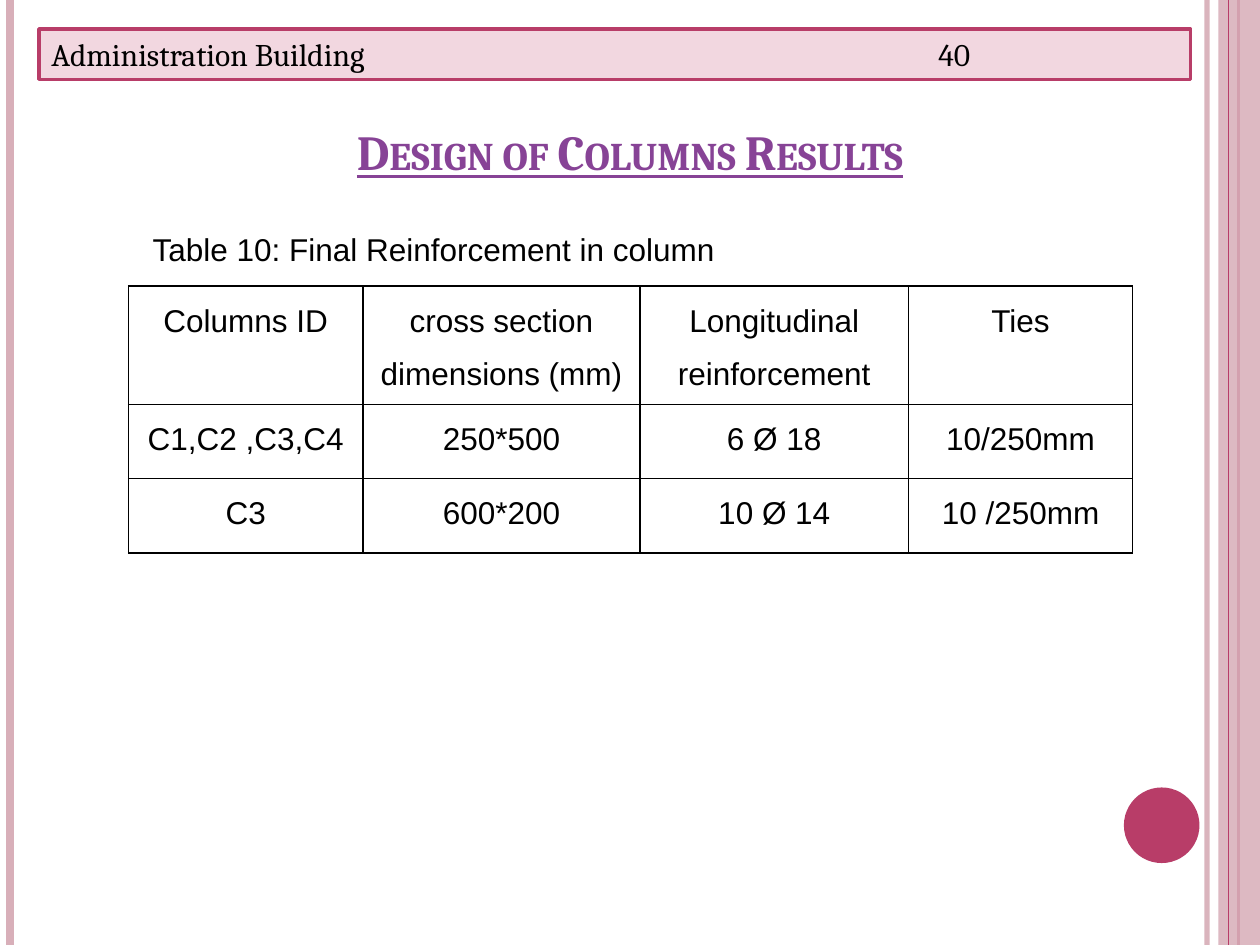
import pptx
import pptx.util
import pptx.dml.color
import pptx.enum.shapes
import pptx.enum.text
import pptx.oxml
import pptx.oxml.ns
from lxml import etree

RGBColor = pptx.dml.color.RGBColor
Inches = pptx.util.Inches
Pt = pptx.util.Pt
SHAPE = pptx.enum.shapes.MSO_SHAPE
ALIGN = pptx.enum.text.PP_ALIGN
ANCHOR = pptx.enum.text.MSO_ANCHOR
qn = pptx.oxml.ns.qn

ROSE = RGBColor(0xB8, 0x3D, 0x68)
DUSTY = RGBColor(0xD8, 0xAF, 0xB9)
BLUSH = RGBColor(0xF2, 0xD7, 0xE0)
PURPLE = RGBColor(0x87, 0x43, 0x96)
BLACK = RGBColor(0, 0, 0)

WIDTH, HEIGHT = 10, 7.5
COLUMN_WIDTHS = [1.86, 2.2, 2.13, 1.78]
ROW_HEIGHTS = [0.94, 0.59, 0.59]
RESULTS = [
    ["Columns ID", "cross section dimensions (mm)", "Longitudinal reinforcement", "Ties"],
    ["C1,C2 ,C3,C4", "250*500", "6 Ø 18", "10/250mm"],
    ["C3", "600*200", "10 Ø 14", "10 /250mm"],
]


def set_alpha(color_parent, percent):
    color = color_parent.find(".//" + qn("a:srgbClr"))
    etree.SubElement(color, qn("a:alpha"), val=str(percent * 1000))


def style_text(paragraph, text, face, size, color, align):
    paragraph.text = text
    paragraph.alignment = align
    font = paragraph.font
    font.name, font.size = face, Pt(size)
    font.color.rgb = color
    return font


def add_panel(slide, kind, box, fill):
    panel = slide.shapes.add_shape(kind, *map(Inches, box))
    panel.shadow.inherit = False
    panel.fill.solid()
    panel.fill.fore_color.rgb = fill
    panel.line.fill.background()
    return panel


def add_stripe(slide, x, box, color, weight, opacity=100):
    left, top, _, height = box
    x, top, bottom = Inches(left + x), Inches(top), Inches(top + height)
    stripe = slide.shapes.add_connector(
        pptx.enum.shapes.MSO_CONNECTOR.STRAIGHT, x, top, x, bottom)
    stripe.line.color.rgb = color
    stripe.line.width = Pt(weight)
    properties = stripe._element.spPr
    etree.SubElement(properties, qn("a:effectLst"))
    if opacity < 100:
        set_alpha(properties, opacity)


def add_borders(slide, box):
    left, top, width, height = box
    add_stripe(slide, width - 0.42, box, DUSTY, 3, 93)
    add_stripe(slide, 0.08, box, DUSTY, 4.5)
    add_stripe(slide, width - 0.17, box, ROSE, 1.5)
    band = add_panel(slide, SHAPE.RECTANGLE, (left + width - 0.33, top, 0.33, height), DUSTY)
    set_alpha(band._element.spPr, 87)
    add_stripe(slide, width - 0.25, box, ROSE, 0.75)
    add_panel(slide, SHAPE.OVAL, (left + width - 1.08, top + height - 1.25, 0.6, 0.6), ROSE)


def add_label(slide, box, anchor, *text_style):
    label = slide.shapes.add_textbox(*map(Inches, box))
    label.text_frame.word_wrap = True
    label.text_frame.vertical_anchor = anchor
    return style_text(label.text_frame.paragraphs[0], *text_style)


def add_title(slide, box):
    font = add_label(slide, box, ANCHOR.BOTTOM, "Design of Columns Results",
                     "Cambria", 28, PURPLE, ALIGN.CENTER)
    font.bold = font.underline = True
    font._element.set("cap", "small")


def add_header(slide, box, page_tab):
    header = add_panel(slide, SHAPE.RECTANGLE, box, BLUSH)
    header.line.color.rgb = ROSE
    header.line.width = Pt(2)
    frame = header.text_frame
    frame.vertical_anchor = ANCHOR.TOP
    paragraph = frame.paragraphs[0]
    style_text(paragraph, "Administration Building\t40", "Cambria", 18, BLACK, ALIGN.LEFT)
    tabs = etree.Element(qn("a:tabLst"))
    etree.SubElement(tabs, qn("a:tab"), pos=str(Inches(page_tab)), algn="l")
    paragraph.font._element.addprevious(tabs)


def add_cell_borders(cell):
    properties = cell._tc.get_or_add_tcPr()
    for position, side in enumerate(("lnL", "lnR", "lnT", "lnB")):
        border = pptx.oxml.parse_xml(
            f'<a:{side} {pptx.oxml.ns.nsdecls("a")} w="{Pt(1)}">'
            f'<a:solidFill><a:srgbClr val="{BLACK}"/></a:solidFill></a:{side}>')
        properties.insert(position, border)


def add_results(slide, left, top):
    box = left, top, sum(COLUMN_WIDTHS), sum(ROW_HEIGHTS)
    table = slide.shapes.add_table(
        len(RESULTS), len(COLUMN_WIDTHS), *map(Inches, box)).table
    table.first_row = table.horz_banding = False
    for column, width in zip(table.columns, COLUMN_WIDTHS):
        column.width = Inches(width)
    for row, height, values in zip(table.rows, ROW_HEIGHTS, RESULTS):
        row.height = Inches(height)
        for cell, value in zip(row.cells, values):
            cell.fill.background()
            cell.margin_left = cell.margin_right = Inches(0.07)
            cell.margin_top = cell.margin_bottom = 0
            paragraph = cell.text_frame.paragraphs[0]
            style_text(paragraph, value, "Arial", 18, BLACK, ALIGN.CENTER)
            paragraph.line_spacing = 1.5
            add_cell_borders(cell)


def main():
    deck = pptx.Presentation()
    deck.slide_width, deck.slide_height = Inches(WIDTH), Inches(HEIGHT)
    slide = deck.slides.add_slide(deck.slide_layouts[6])
    add_borders(slide, (0, 0, WIDTH, HEIGHT))
    add_title(slide, (0.5, 0.77, 9, 0.71))
    add_results(slide, 1.02, 2.27)
    add_header(slide, (0.31, 0.23, 9.14, 0.4), 7.04)
    add_label(slide, (0.98, 1.78, 4.79, 0.4), ANCHOR.TOP,
              "Table 10: Final Reinforcement in column", "Arial", 18, BLACK, ALIGN.RIGHT)
    deck.save("out.pptx")


if __name__ == "__main__":
    main()
